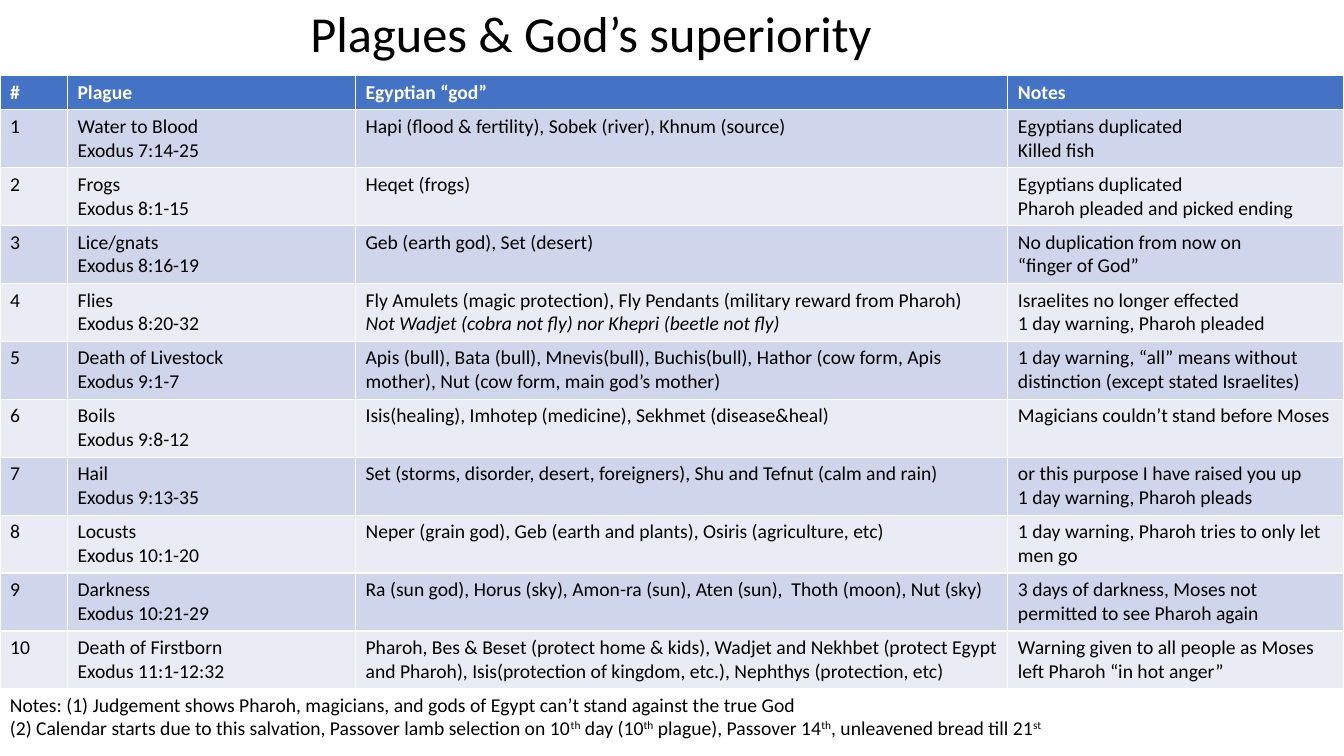
import pptx
import pptx.util
import pptx.dml.color
import pptx.enum.text

Cm = pptx.util.Cm
BLACK = pptx.dml.color.RGBColor(0x00, 0x00, 0x00)
WHITE = pptx.dml.color.RGBColor(0xFF, 0xFF, 0xFF)
BLUE = pptx.dml.color.RGBColor(0x44, 0x72, 0xC4)
DARK = pptx.dml.color.RGBColor(0xCF, 0xD5, 0xEA)
LIGHT = pptx.dml.color.RGBColor(0xE9, 0xEB, 0xF5)


def write(frame, text, size=14, color=BLACK, bold=False, align=None, space=None):
    for n, line in enumerate(text.split("\n")):
        para = frame.add_paragraph() if n else frame.paragraphs[0]
        para.alignment = align
        para.line_spacing = space
        for k, part in enumerate(line.split("^")):
            if not part:
                continue
            run = para.add_run()
            run.text = part
            run.font.name = "Calibri"
            run.font.size = pptx.util.Pt(size)
            run.font.bold = bold
            run.font.color.rgb = color
            if k % 2:
                run.font._element.set("baseline", "30000")


deck = pptx.Presentation()
deck.slide_width = Cm(33.87)
deck.slide_height = Cm(19.05)
slide = deck.slides.add_slide(deck.slide_layouts[6])

rows = [
    ("#", "Plague", "Egyptian “god”", "Notes"),
    ("1", "Water to Blood\nExodus 7:14-25",
     "Hapi (flood & fertility), Sobek (river), Khnum (source)",
     "Egyptians duplicated\nKilled fish"),
    ("2", "Frogs\nExodus 8:1-15", "Heqet (frogs)",
     "Egyptians duplicated\nPharoh pleaded and picked ending"),
    ("3", "Lice/gnats\nExodus 8:16-19", "Geb (earth god), Set (desert)",
     "No duplication from now on\n“finger of God”"),
    ("4", "Flies\nExodus 8:20-32",
     "Fly Amulets (magic protection), Fly Pendants (military reward from Pharoh)\n"
     "Not Wadjet (cobra not fly) nor Khepri (beetle not fly)",
     "Israelites no longer effected\n1 day warning, Pharoh pleaded"),
    ("5", "Death of Livestock\nExodus 9:1-7",
     "Apis (bull), Bata (bull), Mnevis(bull), Buchis(bull), Hathor (cow form, Apis "
     "mother), Nut (cow form, main god’s mother)",
     "1 day warning, “all” means without distinction (except stated Israelites)"),
    ("6", "Boils\nExodus 9:8-12",
     "Isis(healing), Imhotep (medicine), Sekhmet (disease&heal)",
     "Magicians couldn’t stand before Moses"),
    ("7", "Hail\nExodus 9:13-35",
     "Set (storms, disorder, desert, foreigners), Shu and Tefnut (calm and rain)",
     "or this purpose I have raised you up\n1 day warning, Pharoh pleads"),
    ("8", "Locusts\nExodus 10:1-20",
     "Neper (grain god), Geb (earth and plants), Osiris (agriculture, etc)",
     "1 day warning, Pharoh tries to only let men go"),
    ("9", "Darkness\nExodus 10:21-29",
     "Ra (sun god), Horus (sky), Amon-ra (sun), Aten (sun),  Thoth (moon), Nut (sky)",
     "3 days of darkness, Moses not permitted to see Pharoh again"),
    ("10", "Death of Firstborn\nExodus 11:1-12:32",
     "Pharoh, Bes & Beset (protect home & kids), Wadjet and Nekhbet (protect Egypt "
     "and Pharoh), Isis(protection of kingdom, etc.), Nephthys (protection, etc)",
     "Warning given to all people as Moses left Pharoh “in hot anger”"),
]
widths = [1.7, 7.26, 16.44, 8.47]
table = slide.shapes.add_table(
    len(rows), len(widths), 0, Cm(1.9), Cm(33.87), Cm(15.46)).table
for col, width in zip(table.columns, widths):
    col.width = Cm(width)
for r, row in enumerate(rows):
    head = r == 0
    table.rows[r].height = Cm(0.86 if head else 1.46)
    for c, text in enumerate(row):
        cell = table.cell(r, c)
        cell.fill.solid()
        cell.fill.fore_color.rgb = BLUE if head else DARK if r % 2 else LIGHT
        write(cell.text_frame, text, color=WHITE if head else BLACK, bold=head)
table.cell(4, 2).text_frame.paragraphs[1].runs[0].font.italic = True

title = slide.shapes.add_textbox(0, 0, Cm(29.8), Cm(1.73)).text_frame
title.word_wrap = True
title.vertical_anchor = pptx.enum.text.MSO_ANCHOR.BOTTOM
write(title, "Plagues & God’s superiority", size=36,
      align=pptx.enum.text.PP_ALIGN.CENTER, space=0.9)

notes = slide.shapes.add_textbox(0, Cm(17.33), Cm(27.03), Cm(1.45)).text_frame
notes.word_wrap = False
notes.auto_size = pptx.enum.text.MSO_AUTO_SIZE.SHAPE_TO_FIT_TEXT
write(notes,
      "Notes: (1) Judgement shows Pharoh, magicians, and gods of Egypt "
      "can’t stand against the true God\n"
      "(2) Calendar starts due to this salvation, Passover lamb selection on "
      "10^th^ day (10^th^ plague), Passover 14^th^, unleavened bread till 21^st^")

deck.save("out.pptx")
